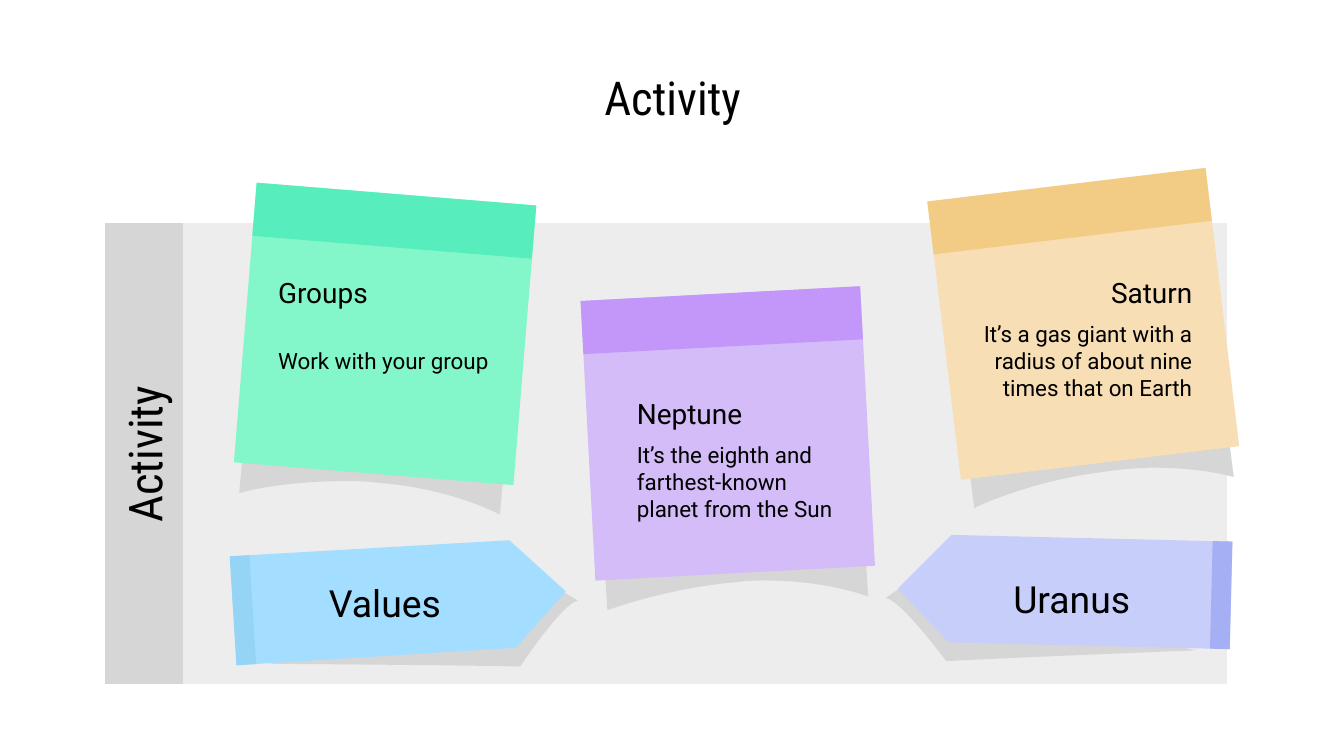
from pptx import Presentation
from pptx.dml.color import RGBColor
from pptx.enum.text import MSO_ANCHOR, PP_ALIGN
from pptx.util import Inches, Pt

THEME = {
    "text": "000000", "panel": "EDEDED", "shade": "D6D6D6",
    "green": ("84F7CA", "58EDBD"), "purple": ("D3BCF7", "C397FA"),
    "orange": ("F7DEB5", "F2CC85"), "blue": ("A3DDFF", "95D4F4"),
    "indigo": ("C7CEF9", "A4AFF4"),
    "title_font": "Roboto Condensed", "font": "Roboto",
    "title": 25, "label": 20, "heading": 15, "body": 12,
}
SLIDE_WIDTH = 10
SLIDE_HEIGHT = SLIDE_WIDTH * 9 / 16
TITLE = "Activity"
LEFT, CENTER, RIGHT = PP_ALIGN.LEFT, PP_ALIGN.CENTER, PP_ALIGN.RIGHT
PANEL = (0.78, 1.66, 8.35, 3.43)
SIDEBAR = (0.78, 1.66, 0.58, 3.43)
NOTE_STRIP, TAG_STRIP = 0.19, 0.07

# Notes: top-left corner and the vector along the top edge.
# Shadows: (x, y) is a line, six numbers are a cubic curve.
NOTES = {
    "Saturn": dict(
        body="It’s a gas giant with a radius of about nine times that on Earth",
        color="orange", corner=(6.9, 1.5), edge=(2.07, -0.25),
        text_at=(7.18, 2.03), align=RIGHT,
        shadow=[(9.14, 3.23), (7.21, 3.47), (7.25, 3.78),
                (7.33, 3.74, 7.72, 3.57, 8.22, 3.51),
                (8.36, 3.49, 8.48, 3.48, 8.59, 3.48),
                (8.95, 3.48, 9.18, 3.55, 9.18, 3.55)]),
    "Groups": dict(
        body="Work with your group",
        color="green", corner=(1.91, 1.36), edge=(2.08, 0.17),
        text_at=(1.97, 2.03), align=LEFT,
        shadow=[(3.75, 3.5), (1.81, 3.35), (1.78, 3.67),
                (1.87, 3.64, 2.17, 3.58, 2.56, 3.58),
                (2.63, 3.58, 2.71, 3.58, 2.79, 3.59),
                (3.36, 3.63, 3.72, 3.83, 3.72, 3.83)]),
    "Neptune": dict(
        body="It’s the eighth and farthest-known planet from the Sun",
        color="purple", corner=(4.32, 2.24), edge=(2.08, -0.11),
        text_at=(4.64, 2.93), align=LEFT,
        shadow=[(6.44, 4.11), (4.5, 4.23), (4.52, 4.54),
                (4.61, 4.51, 5.01, 4.37, 5.5, 4.33),
                (5.57, 4.32, 5.64, 4.32, 5.7, 4.32),
                (6.16, 4.32, 6.46, 4.44, 6.46, 4.44)]),
}

# Tag outlines run from the top of the tail, round the tip, to its bottom.
TAGS = {
    "Uranus": dict(
        color="indigo", text_at=(7.02, 4.31),
        outline=[(9.17, 4.03), (7.08, 3.98), (6.68, 4.38), (7.06, 4.78), (9.15, 4.83)],
        shadow=[(6.72, 4.36), (6.59, 4.45), (6.7, 4.46, 7.04, 4.92, 7.04, 4.92),
                (7.4, 4.9, 8.88, 4.84, 8.9, 4.84)]),
    "Values": dict(
        color="blue", text_at=(1.91, 4.34),
        outline=[(1.71, 4.14), (3.79, 4.02), (4.21, 4.4), (3.84, 4.82), (1.76, 4.95)],
        shadow=[(4.17, 4.39), (2.01, 4.94), (2.15, 4.94, 3.52, 4.95, 3.87, 4.96),
                (3.87, 4.96, 4.19, 4.48, 4.3, 4.47)]),
}


def flatten(segments, steps=12):
    """Turn lines and cubic curves into a list of points."""
    points = []
    for seg in segments:
        if len(seg) == 2:
            points.append(seg)
            continue
        ctrl = [points[-1], seg[:2], seg[2:4], seg[4:]]
        for i in range(1, steps + 1):
            t = i / steps
            weights = ((1 - t) ** 3, 3 * t * (1 - t) ** 2, 3 * t * t * (1 - t), t ** 3)
            points.append(tuple(sum(w * c[axis] for w, c in zip(weights, ctrl))
                                for axis in (0, 1)))
    return points


def add_polygon(slide, segments, color):
    points = [(Inches(x), Inches(y)) for x, y in flatten(segments)]
    builder = slide.shapes.build_freeform(*points[0])
    builder.add_line_segments(points[1:], close=True)
    sp = builder.convert_to_shape()
    sp.shadow.inherit = False
    sp.fill.solid()
    sp.fill.fore_color.rgb = RGBColor.from_string(color)
    sp.line.fill.background()


def add_rect(slide, box, color):
    x, y, w, h = box
    add_polygon(slide, [(x, y), (x, y + h), (x + w, y + h), (x + w, y)], color)


def between(a, b, part):
    return tuple(p + (q - p) * part for p, q in zip(a, b))


def add_paper(slide, outline, shadow, color, part):
    """Draw a shadow, a sheet and a strip along the edge from last to first point."""
    fill, strip = THEME[color]
    first, second, *_, before_last, last = outline
    add_polygon(slide, shadow, THEME["shade"])
    add_polygon(slide, outline, fill)
    add_polygon(slide, [first, between(first, second, part),
                        between(last, before_last, part), last], strip)


def note_outline(corner, edge):
    (x, y), (dx, dy) = corner, edge
    return [(x, y), (x - dy, y + dx), (x + dx - dy, y + dy + dx), (x + dx, y + dy)]


def add_text(slide, text, box, size, font="font", align=CENTER, rotation=0):
    sp = slide.shapes.add_textbox(*map(Inches, box))
    sp.rotation = rotation
    tf = sp.text_frame
    tf.word_wrap = True
    tf.vertical_anchor = MSO_ANCHOR.MIDDLE
    tf.margin_left = tf.margin_right = tf.margin_top = tf.margin_bottom = Inches(0.1)
    p = tf.paragraphs[0]
    p.alignment = align
    r = p.add_run()
    r.text = text
    r.font.size = Pt(THEME[size])
    r.font.name = THEME[font]
    r.font.color.rgb = RGBColor.from_string(THEME["text"])


def add_note(slide, name):
    note = NOTES[name]
    add_paper(slide, note_outline(note["corner"], note["edge"]),
              note["shadow"], note["color"], NOTE_STRIP)
    x, y = note["text_at"]
    add_text(slide, name, (x, y, 1.79, 0.29), "heading", align=note["align"])
    add_text(slide, note["body"], (x, y + 0.33, 1.79, 0.65), "body", align=note["align"])


def add_tag(slide, name):
    tag = TAGS[name]
    add_paper(slide, tag["outline"], tag["shadow"], tag["color"], TAG_STRIP)
    add_text(slide, name, (*tag["text_at"], 1.91, 0.29), "label")


def main():
    prs = Presentation()
    prs.slide_width, prs.slide_height = Inches(SLIDE_WIDTH), Inches(SLIDE_HEIGHT)
    s = prs.slides.add_slide(prs.slide_layouts[6])
    add_text(s, TITLE, (0.78, 0.5, 8.45, 0.44), "title", "title_font")
    add_rect(s, PANEL, THEME["panel"])
    add_rect(s, SIDEBAR, THEME["shade"])
    for name in NOTES:
        add_note(s, name)
    for name in TAGS:
        add_tag(s, name)
    add_text(s, TITLE, (0.22, 3.16, 1.7, 0.44), "title", "title_font", rotation=270)
    prs.save("out.pptx")


if __name__ == "__main__":
    main()
